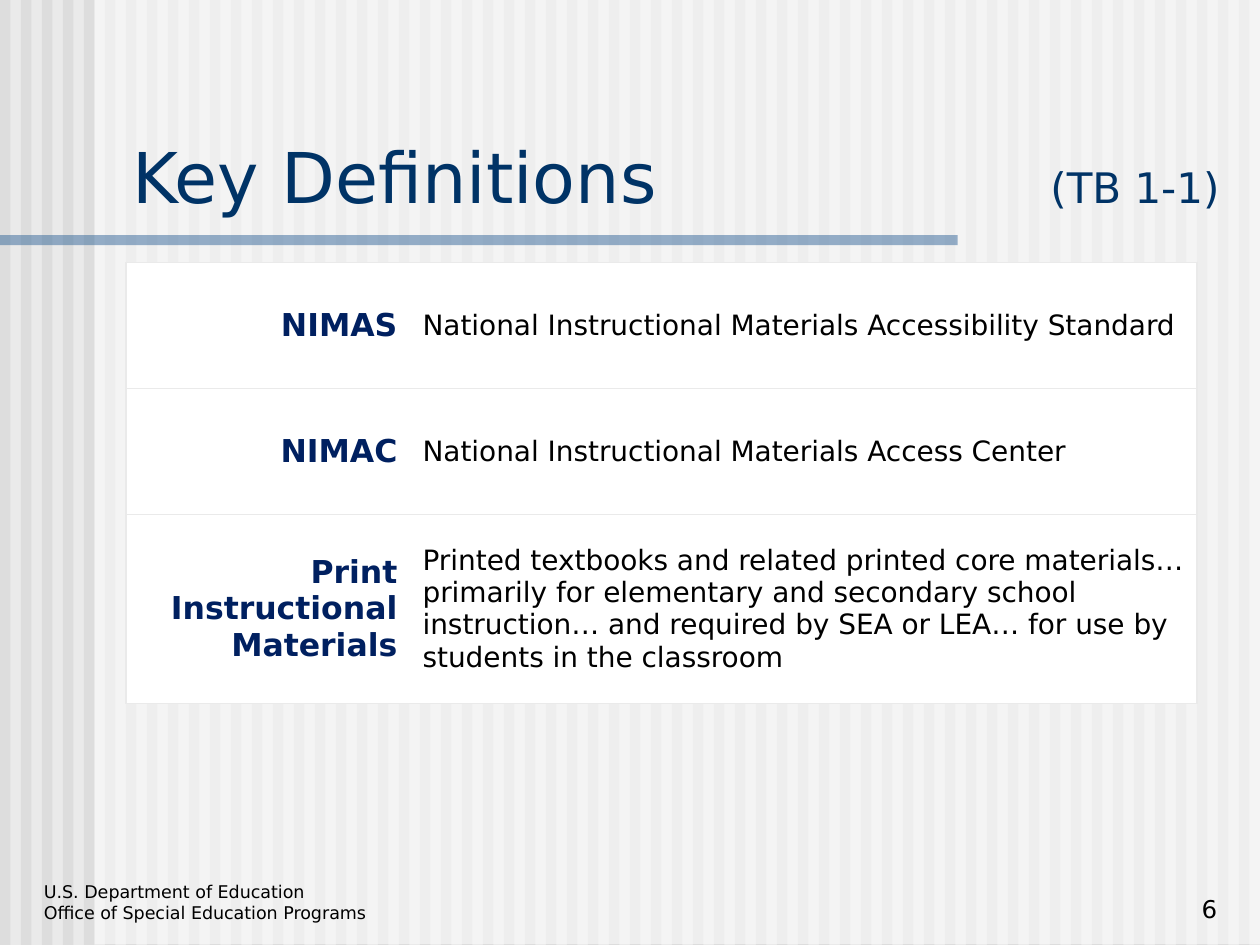
from collections import namedtuple
from pptx import Presentation, util as u
from pptx.dml.color import RGBColor
from pptx.enum import shapes, text
from pptx.oxml import parse_xml
from pptx.oxml.ns import nsdecls, qn
from lxml import etree

Box = namedtuple("Box", "x y w h")
UNIT = u.Inches(1) / 12
COLS, ROWS = 120, 90
FONT = "DejaVu Sans"
NAVY, EDGE = "002060", "EAEAEA"
TERMS = [
    ("NIMAS", "National Instructional Materials Accessibility Standard"),
    ("NIMAC", "National Instructional Materials Access Center"),
    ("Print Instructional Materials",
     "Printed textbooks and related printed core materials… primarily for "
     "elementary and secondary school instruction… and required by SEA or "
     "LEA… for use by students in the classroom"),
]


def tint(code):
    """Turn a hex string into a colour."""
    return RGBColor.from_string(code)


def span(box):
    """Turn a box in grid units into lengths."""
    return [u.Emu(round(n * UNIT)) for n in box]


def write(par, words, size=16, color="000000", bold=False, align=None):
    """Add a formatted run to a paragraph."""
    run = par.add_run()
    run.text = words
    font = run.font
    font.name, font.size, font.bold = FONT, u.Pt(size), bold
    font.color.rgb = tint(color)
    if align:
        par.alignment = align


def frame(slide, box):
    """Add a wrapping text box that fills from the bottom."""
    body = slide.shapes.add_textbox(*span(box)).text_frame
    body.word_wrap = True
    body.vertical_anchor = text.MSO_ANCHOR.BOTTOM
    return body


def bar(parts, box, color, alpha=None):
    """Draw a plain rectangle, see-through if alpha is given."""
    rect = parts.add_shape(shapes.MSO_SHAPE.RECTANGLE, *span(box))
    rect.shadow.inherit = False
    rect.fill.solid()
    rect.fill.fore_color.rgb = tint(color)
    rect.line.fill.background()
    if alpha:
        tone = rect._element.spPr.find(".//" + qn("a:srgbClr"))
        etree.SubElement(tone, qn("a:alpha")).set("val", str(alpha * 1000))


def backdrop(slide, box):
    """Stripe the box and veil all but its left edge."""
    slide.background.fill.solid()
    slide.background.fill.fore_color.rgb = tint(EDGE)
    parts = slide.shapes.add_group_shape().shapes
    for col in range(0, box.w, 2):
        bar(parts, Box(box.x + col, box.y, 1, box.h), "DDDDDD")
    bar(parts, Box(box.x + 9, box.y - 0.1, box.w - 9, box.h), "FFFFFF", 50)


def heading(slide, box):
    """Write the title and its reference above a rule."""
    bar(slide.shapes, Box(0, box.y + 10.4, 91.2, 0.95), "336699", 50)
    par = frame(slide, box).paragraphs[0]
    write(par, "Key Definitions \t", size=40, color="003366")
    write(par, "(TB 1-1)", size=24, color="003366")
    stop = round(87.4 * UNIT)
    par._p.get_or_add_pPr().append(parse_xml(
        f'<a:tabLst {nsdecls("a")}><a:tab pos="{stop}" algn="l"/></a:tabLst>'))


def edge(cell, sides):
    """Line the given sides of a cell and clear the others."""
    props = cell._tc.get_or_add_tcPr()
    for side in "LRTB":
        paint = (f'<a:solidFill><a:srgbClr val="{EDGE}"/></a:solidFill>'
                 if side in sides else "<a:noFill/>")
        props.append(parse_xml(
            f'<a:ln{side} {nsdecls("a")} w="12700">{paint}</a:ln{side}>'))


def terms(slide, box):
    """Lay out the table of terms and meanings."""
    grid = slide.shapes.add_table(len(TERMS), 2, *span(box)).table
    grid.first_row = grid.horz_banding = False
    lead = 27.05
    for col, wide in zip(grid.columns, (lead, box.w - lead)):
        col.width = round(wide * UNIT)
    looks = [dict(size=18, color=NAVY, bold=True, align=text.PP_ALIGN.RIGHT),
             dict(size=16)]
    for row, high, pair in zip(grid.rows, (12, 12, 18), TERMS):
        row.height = round(high * UNIT)
        for cell, words, look, sides in zip(row.cells, pair, looks,
                                            ("LTB", "RTB")):
            edge(cell, sides)
            cell.fill.solid()
            cell.fill.fore_color.rgb = tint("FFFFFF")
            cell.vertical_anchor = text.MSO_ANCHOR.MIDDLE
            write(cell.text_frame.paragraphs[0], words, **look)


def footer(slide, box):
    """Write the office at the left and the page number at the right."""
    body = frame(slide, Box(box.x, box.y, 40, 7))
    write(body.paragraphs[0], "U.S. Department of Education", size=10)
    write(body.add_paragraph(), "Office of Special Education Programs", size=10)
    page = frame(slide, Box(box.x + box.w - 25, box.y + 1, 25, 6))
    write(page.paragraphs[0], "6", size=14, align=text.PP_ALIGN.RIGHT)


def main():
    """Build and save the slide."""
    deck = Presentation()
    deck.slide_width, deck.slide_height = span((COLS, ROWS))
    slide = deck.slides.add_slide(deck.slide_layouts[6])
    backdrop(slide, Box(0, 0, COLS, ROWS))
    heading(slide, Box(11.45, 12, 107.2, 9.33))
    terms(slide, Box(12, 25, 102, 42))
    footer(slide, Box(3, 81.5, 114.1, 7))
    deck.save("out.pptx")


if __name__ == "__main__":
    main()
